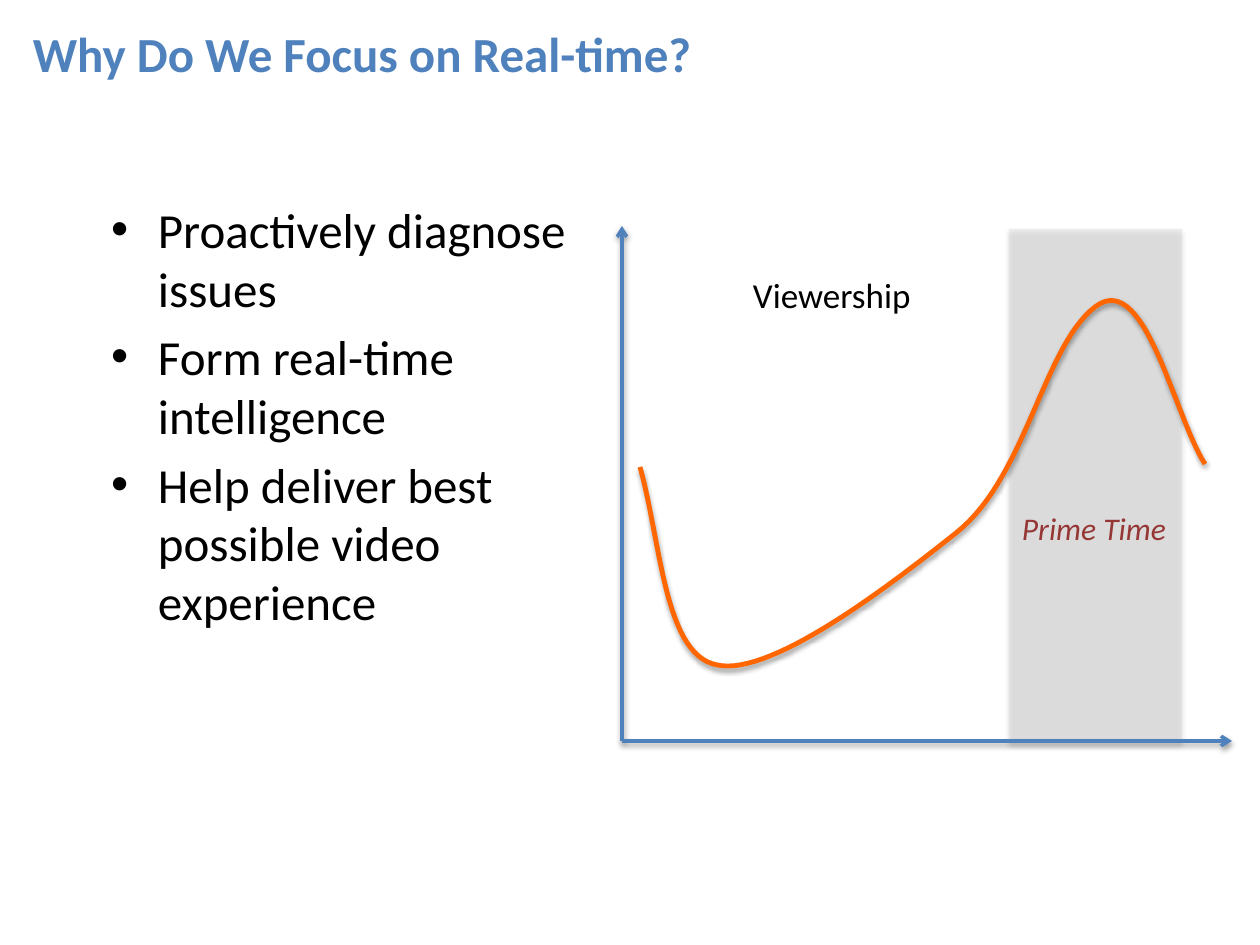
from typing import NamedTuple

from lxml.etree import SubElement
from pptx import Presentation
from pptx.dml.color import RGBColor
from pptx.enum.shapes import MSO_CONNECTOR, MSO_SHAPE
from pptx.enum.text import PP_ALIGN
from pptx.oxml.ns import qn
from pptx.util import Pt

PX = 914400 / 126  # EMU in one px
BLUE, ORANGE, GREY, RED, BLACK = "4F81BD", "FF6600", "D9D9D9", "953735", "000000"


class Box(NamedTuple):
    left: int
    top: int
    width: int
    height: int


class Point(NamedTuple):
    x: int
    y: int


def emu(px: float) -> int:
    return round(px * PX)


def rgb(value: str) -> RGBColor:
    return RGBColor.from_string(value)


def add_shadow(shape, opacity: int, distance: float) -> None:
    """Give the shape a soft shadow straight below it."""
    effects = SubElement(shape._element.spPr, qn("a:effectLst"))
    outer = SubElement(effects, qn("a:outerShdw"), blurRad=str(Pt(3.1)),
                       dist=str(Pt(distance)), dir="5400000", rotWithShape="0")
    black = SubElement(outer, qn("a:srgbClr"), val=BLACK)
    SubElement(black, qn("a:alpha"), val=str(opacity * 1000))


def add_text(slide, box: Box, *lines: str, size: int, color: str,
             bold: bool = False, italic: bool = False, align=PP_ALIGN.LEFT,
             bullet_indent: int = 0, line_spacing: float = 1.0,
             left_inset: int = 13) -> None:
    frame = slide.shapes.add_textbox(*map(emu, box)).text_frame
    frame.word_wrap = True
    frame.margin_left = emu(left_inset)
    for index, line in enumerate(lines):
        paragraph = frame.add_paragraph() if index else frame.paragraphs[0]
        paragraph.alignment = align
        paragraph.line_spacing = line_spacing
        if index:
            paragraph.space_before = Pt(size * 0.2)
        if bullet_indent:
            props = paragraph._p.get_or_add_pPr()
            props.set("marL", str(emu(bullet_indent)))
            props.set("indent", str(-emu(bullet_indent)))
            SubElement(props, qn("a:buFont"), typeface="Arial")
            SubElement(props, qn("a:buChar"), char="•")
        run = paragraph.add_run()
        run.text = line
        run.font.name = "Calibri"
        run.font.size = Pt(size)
        run.font.bold = bold
        run.font.italic = italic
        run.font.color.rgb = rgb(color)


def add_band(slide, box: Box) -> None:
    band = slide.shapes.add_shape(MSO_SHAPE.RECTANGLE, *map(emu, box))
    band.fill.solid()
    band.fill.fore_color.rgb = rgb(GREY)
    color = band._element.spPr.find(qn("a:solidFill"))[0]
    SubElement(color, qn("a:alpha"), val="38000")
    band.line.fill.background()
    add_shadow(band, 35, 1.8)


def add_axis(slide, start: Point, end: Point) -> None:
    axis = slide.shapes.add_connector(
        MSO_CONNECTOR.STRAIGHT, *map(emu, (*start, *end)))
    axis.line.color.rgb = rgb(BLUE)
    axis.line.width = Pt(2)
    SubElement(axis.line._get_or_add_ln(), qn("a:tailEnd"), type="arrow")
    add_shadow(axis, 38, 1.6)


def bezier(points: list[Point], t: float) -> tuple[int, int]:
    weights = ((1 - t) ** 3, 3 * t * (1 - t) ** 2, 3 * t * t * (1 - t), t ** 3)
    x, y = (sum(w * p[i] for w, p in zip(weights, points)) for i in (0, 1))
    return emu(x), emu(y)


def add_curve(slide, controls: list[Point], steps: int = 30) -> None:
    """Draw joined cubic curves; every third control point lies on the line."""
    builder = slide.shapes.build_freeform(*map(emu, controls[0]))
    builder.add_line_segments(
        [bezier(controls[first:first + 4], step / steps)
         for first in range(0, len(controls) - 1, 3)
         for step in range(1, steps + 1)], close=False)
    curve = builder.convert_to_shape()
    curve.fill.background()
    curve.line.color.rgb = rgb(ORANGE)
    curve.line.width = Pt(2.75)
    add_shadow(curve, 38, 1.6)


def main() -> None:
    deck = Presentation()
    deck.slide_width, deck.slide_height = emu(1260), emu(945)
    slide = deck.slides.add_slide(deck.slide_layouts[6])

    # Title and reasons
    add_text(slide, Box(33, 26, 1200, 110), "Why Do We Focus on Real-time?",
             size=28, color=BLUE, bold=True, line_spacing=0.85, left_inset=0)
    add_text(slide, Box(98, 193, 525, 567), "Proactively diagnose issues",
             "Form real-time intelligence",
             "Help deliver best possible video experience",
             size=28, color=BLACK, bullet_indent=47)

    # Viewership over the day
    prime_time = Box(1009, 229, 173, 514)
    add_band(slide, prime_time)
    add_curve(slide, [
        Point(640, 467),
        Point(661, 541), Point(664, 655), Point(717, 665),
        Point(770, 677), Point(887, 588), Point(956, 533),
        Point(1026, 478), Point(1043, 347), Point(1095, 307),
        Point(1145, 268), Point(1174, 416), Point(1205, 464)])

    # Axes
    origin = Point(622, 741)
    add_axis(slide, origin, Point(origin.x, 226))
    add_axis(slide, origin, Point(1232, origin.y))

    # Labels
    add_text(slide, Box(prime_time.left, 503, prime_time.width, 50),
             "Prime Time", size=18, color=RED, italic=True)
    add_text(slide, Box(638, 267, 387, 55), "Viewership",
             size=20, color=BLACK, align=PP_ALIGN.CENTER)

    deck.save("out.pptx")


if __name__ == "__main__":
    main()
